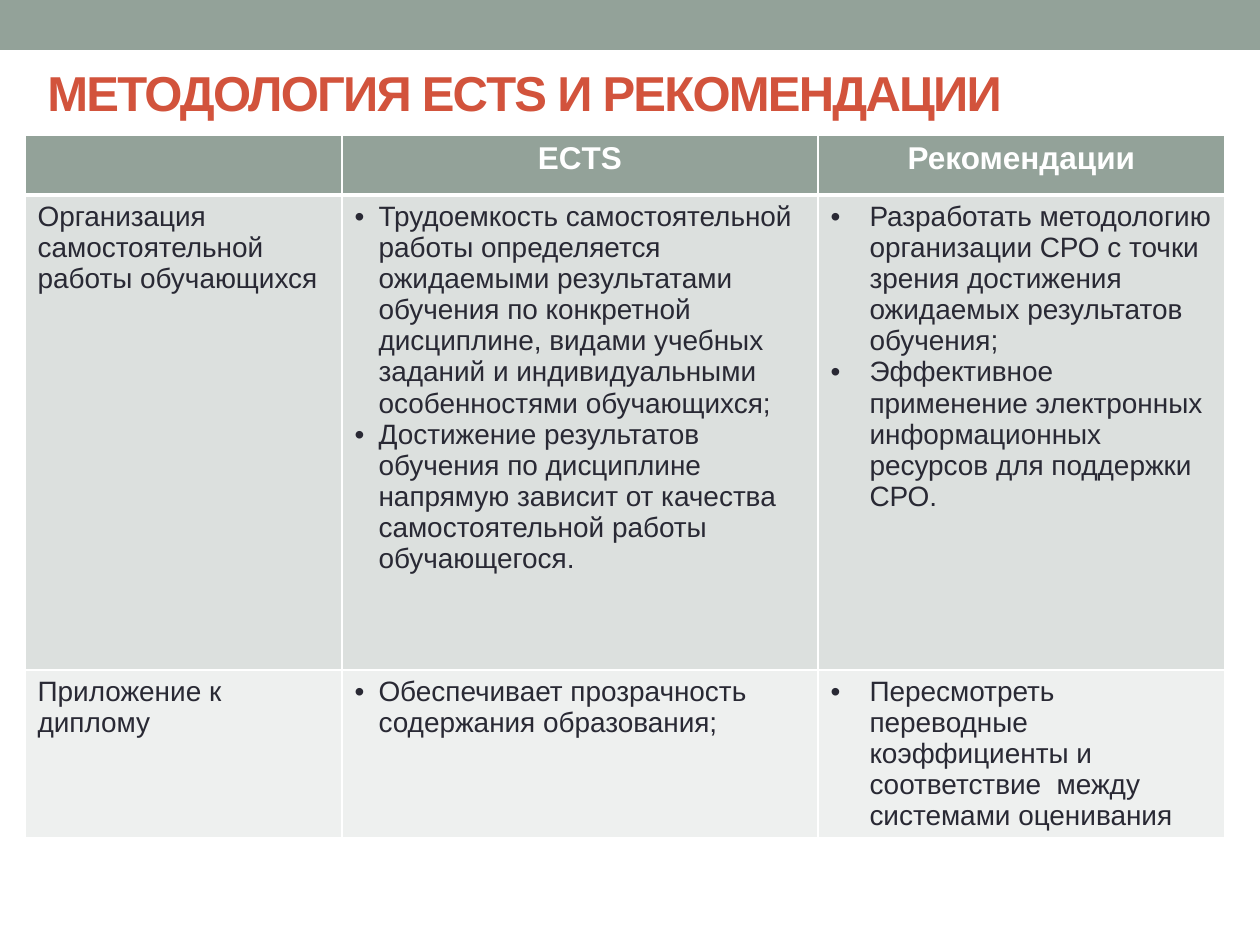
from lxml.etree import SubElement
from pptx import Presentation
from pptx.dml.color import RGBColor
from pptx.enum.shapes import MSO_SHAPE as Shape
from pptx.enum.text import MSO_ANCHOR as Anchor, PP_ALIGN as Align
from pptx.oxml import parse_xml
from pptx.oxml.ns import nsdecls, qn
from pptx.util import Pt

TITLE = "МЕТОДОЛОГИЯ ECTS И РЕКОМЕНДАЦИИ"
HEADER = ["", "ECTS", "Рекомендации"]
ROWS = [
    (
        ["Организация самостоятельной работы обучающихся"],
        [
            "Трудоемкость самостоятельной работы определяется ожидаемыми результатами обучения "
            "по конкретной дисциплине, видами учебных заданий и индивидуальными особенностями "
            "обучающихся;",
            "Достижение результатов обучения по дисциплине напрямую зависит от качества "
            "самостоятельной работы обучающегося.",
        ],
        [
            "Разработать методологию организации СРО с точки зрения достижения ожидаемых "
            "результатов обучения;",
            "Эффективное применение электронных информационных ресурсов для поддержки СРО.",
        ],
    ),
    (
        ["Приложение к диплому"],
        ["Обеспечивает прозрачность содержания образования;"],
        [
            "Пересмотреть переводные коэффициенты и соответствие  между системами оценивания",
        ],
    ),
]
COLORS = {
    "sage": "93A299",
    "band_dark": "DCE0DE",
    "band_light": "EEF0EF",
    "white": "FFFFFF",
    "ink": "292934",
    "red": "D2533C",
}
FONT = "Arial"
COL_WIDTHS = [317, 476, 407]
ROW_HEIGHTS = [60, 475, 95]
INDENTS = [0, 24, 39]
BANDS = ["band_dark", "band_light"]
SCALE = 914400 / 126


def px(n):
    return round(n * SCALE)


def rgb(name):
    return RGBColor.from_string(COLORS[name])


def add_run(p, text, size, color, bold=False):
    r = p.add_run()
    r.text = text
    r.font.name = FONT
    r.font.size = Pt(size)
    r.font.bold = bold
    r.font.color.rgb = rgb(color)
    return r


def add_bullet(p, indent):
    pPr = p._p.get_or_add_pPr()
    pPr.set("marL", str(px(indent)))
    pPr.set("indent", str(-px(indent)))
    SubElement(pPr, qn("a:buFont"), typeface=FONT)
    SubElement(pPr, qn("a:buChar"), char="•")


def style_cell(cell, fill, bottom=1, top=1):
    cell.fill.solid()
    cell.fill.fore_color.rgb = rgb(fill)
    tcPr = cell._tc.get_or_add_tcPr()
    for i, (side, width) in enumerate([("L", 1), ("R", 1), ("T", top), ("B", bottom)]):
        tcPr.insert(i, parse_xml(
            f'<a:ln{side} {nsdecls("a")} w="{Pt(width)}"><a:solidFill>'
            f'<a:srgbClr val="{COLORS["white"]}"/></a:solidFill></a:ln{side}>'))


def add_band(s):
    sp = s.shapes.add_shape(Shape.RECTANGLE, 0, 0, px(1260), px(50))
    sp.shadow.inherit = False
    sp.fill.solid()
    sp.fill.fore_color.rgb = rgb("sage")
    sp.line.fill.background()


def add_table(s):
    table = s.shapes.add_table(
        len(ROW_HEIGHTS), len(COL_WIDTHS), px(25), px(135),
        px(sum(COL_WIDTHS)), px(sum(ROW_HEIGHTS))).table
    for col, width in zip(table.columns, COL_WIDTHS):
        col.width = px(width)
    for row, height in zip(table.rows, ROW_HEIGHTS):
        row.height = px(height)

    for c, text in enumerate(HEADER):
        cell = table.cell(0, c)
        style_cell(cell, "sage", bottom=3)
        if text:
            p = cell.text_frame.paragraphs[0]
            p.alignment = Align.CENTER
            add_run(p, text, 18, "white", bold=True)

    for n, (row, band) in enumerate(zip(ROWS, BANDS), 1):
        for c, (items, indent) in enumerate(zip(row, INDENTS)):
            cell = table.cell(n, c)
            style_cell(cell, band, top=3 if n == 1 else 1)
            tf = cell.text_frame
            for i, text in enumerate(items):
                p = tf.add_paragraph() if i else tf.paragraphs[0]
                if indent:
                    add_bullet(p, indent)
                add_run(p, text, 16, "ink")


def add_title(s):
    tf = s.shapes.add_textbox(px(35), px(37), px(1134), px(110)).text_frame
    tf.word_wrap = True
    tf.vertical_anchor = Anchor.MIDDLE
    r = add_run(tf.paragraphs[0], TITLE, 28, "red", bold=True)
    r._r.get_or_add_rPr().set("spc", "-100")


def main():
    prs = Presentation()
    prs.slide_width, prs.slide_height = px(1260), px(945)
    s = prs.slides.add_slide(prs.slide_layouts[6])
    add_band(s)
    add_table(s)
    add_title(s)
    prs.save("out.pptx")


if __name__ == "__main__":
    main()
